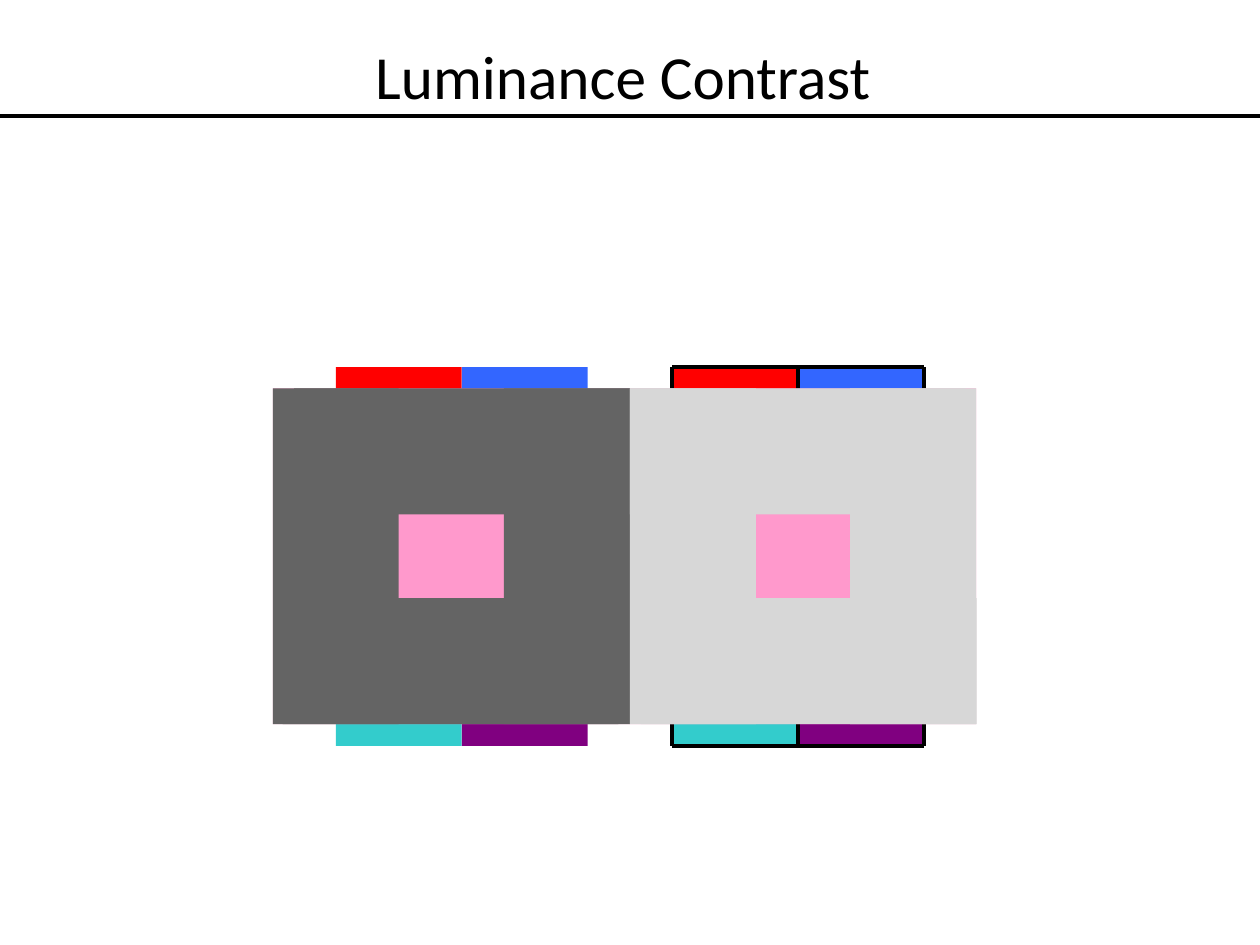
import pptx
import pptx.dml.color
import pptx.enum.shapes
import pptx.enum.text
import pptx.oxml
import pptx.util

Cm = pptx.util.Cm
RECTANGLE = pptx.enum.shapes.MSO_SHAPE.RECTANGLE


def color(hex_string):
    return pptx.dml.color.RGBColor.from_string(hex_string)


def add_text(slide, text, left, top, width, height, font="Calibri", size=35, fill="000000"):
    box = slide.shapes.add_textbox(Cm(left), Cm(top), Cm(width), Cm(height))
    box.text_frame.word_wrap = True
    paragraph = box.text_frame.paragraphs[0]
    paragraph.alignment = pptx.enum.text.PP_ALIGN.CENTER
    run = paragraph.add_run()
    run.text = text
    run.font.name = font
    run.font.size = pptx.util.Pt(size)
    run.font.color.rgb = color(fill)


presentation = pptx.Presentation()
presentation.slide_width = Cm(25.4)
presentation.slide_height = Cm(19.05)
slide = presentation.slides.add_slide(presentation.slide_layouts[6])

add_text(slide, "Luminance Contrast ", 0, 0.64, 25.4, 1.73)

# Color squares: two sets of four, with a gap between the rows
square = 2.54
grid_top, row_step = 7.4, 5.1
grid_bottom = grid_top + row_step + square
square_colors = [["FF0000", "3366FF"], ["33CCCC", "800080"]]
plain_left, outlined_left = 6.77, 13.55
rectangles = []
for grid_left in (plain_left, outlined_left):
    for row, row_colors in enumerate(square_colors):
        for column, fill in enumerate(row_colors):
            rectangles.append((grid_left + column * square, grid_top + row * row_step,
                               square, square, fill))

# Pink field under the two gray frames
panel_left, panel_top, panel_width, panel_height = 5.5, 7.83, 14.18, 6.77
rectangles.append((panel_left, panel_top, panel_width, panel_height, "FF99CC"))

# Gray frames: two upright bars, then a top and a bottom bar
bar = 2.54
bottom_bar_top = panel_top + panel_height - bar
frames = [("646464", (panel_left, 10.16), (5.93, 5.7)),
          ("D7D7D7", (12.7, 17.14), (12.7, 12.92))]
for fill, upright_lefts, level_lefts in frames:
    for left in upright_lefts:
        rectangles.append((left, panel_top, bar, panel_height, fill))
    for left, top in zip(level_lefts, (panel_top, bottom_bar_top)):
        rectangles.append((left, top, panel_height, bar, fill))

# Black lines: around the right set of squares, and under the title
outlined_right = outlined_left + 2 * square
lines = [(outlined_left + column * square, grid_top,
          outlined_left + column * square, grid_bottom) for column in range(3)]
lines += [(outlined_left, y, outlined_right, y) for y in (grid_top, grid_bottom)]
lines.append((0, 2.34, 25.4, 2.34))

# Draw the squares, the lines over them, then the panel on top
square_count = 8
for left, top, width, height, fill in rectangles[:square_count] + [None] * 0:
    shape = slide.shapes.add_shape(RECTANGLE, Cm(left), Cm(top), Cm(width), Cm(height))
    shape.shadow.inherit = False
    shape.fill.solid()
    shape.fill.fore_color.rgb = color(fill)
    shape.line.fill.background()

for start_x, start_y, end_x, end_y in lines:
    line = slide.shapes.add_connector(pptx.enum.shapes.MSO_CONNECTOR.STRAIGHT,
                                      Cm(start_x), Cm(start_y), Cm(end_x), Cm(end_y))
    line.line.color.rgb = color("000000")
    line.line.width = pptx.util.Pt(2)
    line._element.spPr.append(pptx.oxml.parse_xml(
        '<a:effectLst xmlns:a="http://schemas.openxmlformats.org/drawingml/2006/main"/>'))

for left, top, width, height, fill in rectangles[square_count:]:
    shape = slide.shapes.add_shape(RECTANGLE, Cm(left), Cm(top), Cm(width), Cm(height))
    shape.shadow.inherit = False
    shape.fill.solid()
    shape.fill.fore_color.rgb = color(fill)
    shape.line.fill.background()

presentation.save("out.pptx")
